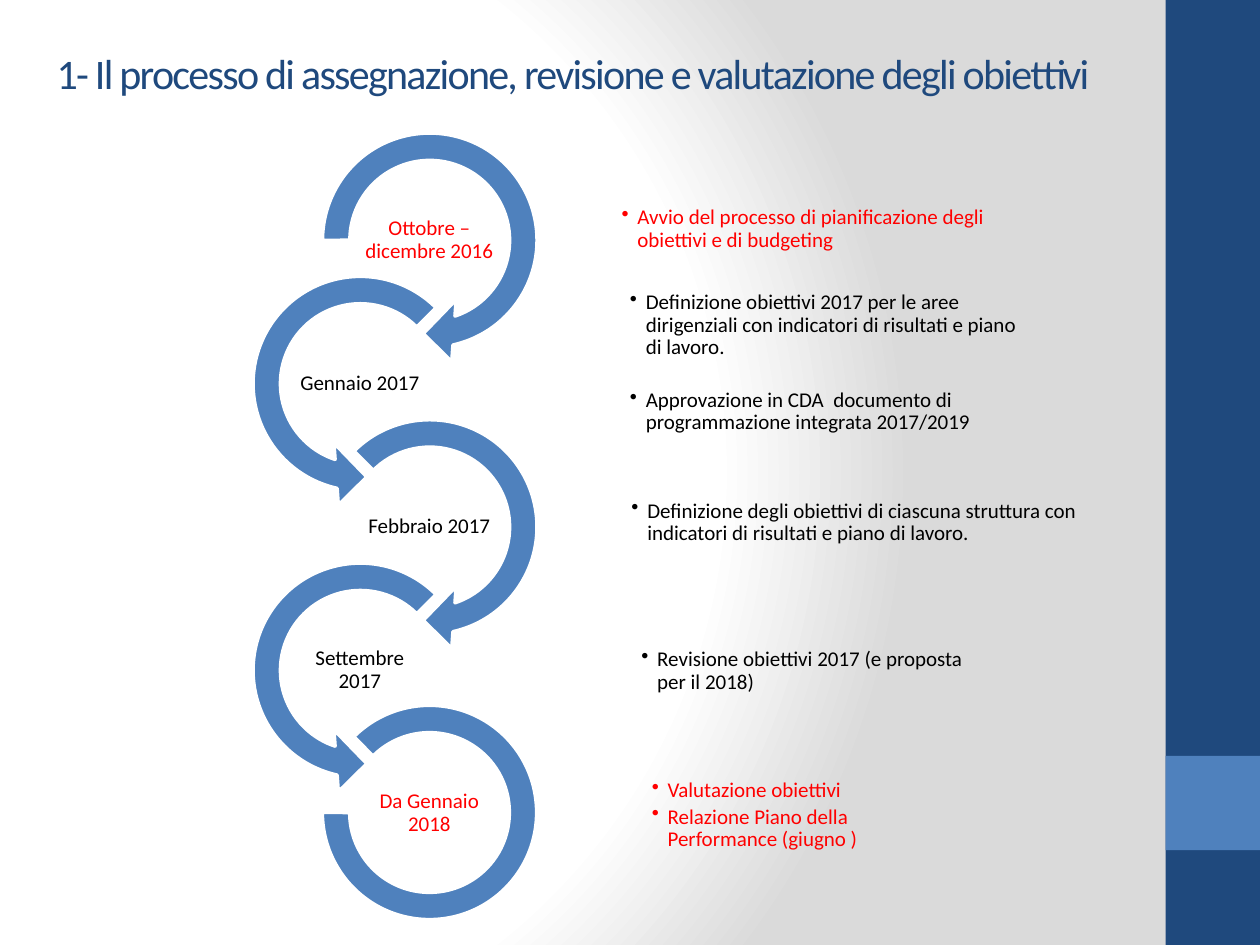
from lxml.etree import SubElement as Sub
from pptx import Presentation as Deck
from pptx.dml.color import RGBColor as Rgb
from pptx.enum.shapes import MSO_SHAPE as Kind
from pptx.enum.text import MSO_ANCHOR as Anchor, PP_ALIGN as Align
from pptx.oxml.ns import qn
from pptx.util import Cm, Pt

HUES = {"navy": "1F497D", "blue": "4F81BD", "red": "FF0000",
        "black": "000000", "white": "FFFFFF", "grey": "DADADA"}
STEP = 2.89
RING = 5.03
RIGHT, LEFT = 6.15, 4.75
ARROWS = [
    (Kind.CIRCULAR_ARROW, (0.1098, 11.42, 45, 108, 0.125)),
    (Kind.LEFT_CIRCULAR_ARROW, (0.1098, 11.42, 63, 189, 0.125)),
    (Kind.CIRCULAR_ARROW, (0.1098, 11.42, 45, 135, 0.125)),
    (Kind.LEFT_CIRCULAR_ARROW, (0.1098, 11.42, 63, 189, 0.125)),
]
STAGES = [
    ("Ottobre –dicembre 2016", "red", (12.5, 3.33, 8.26, 2.57),
     ["Avvio del processo di pianificazione degli obiettivi e di budgeting"], 2),
    ("Gennaio 2017", "black", (12.67, 5.51, 8.03, 3.61),
     ["Definizione obiettivi 2017 per le aree dirigenziali con indicatori di risultati e piano di lavoro.",
      "Approvazione in CDA  documento di programmazione integrata 2017/2019"], 17),
    ("Febbraio 2017", "black", (12.7, 9.53, 9.73, 2.01),
     ["Definizione degli obiettivi di ciascuna struttura con indicatori di risultati e piano di lavoro."], 2),
    ("Settembre 2017", "black", (12.9, 12.52, 6.81, 2.01),
     ["Revisione obiettivi 2017 (e proposta per il 2018)"], 2),
    ("Da Gennaio 2018", "red", (13.11, 15.32, 5.66, 2.24),
     ["Valutazione obiettivi", "Relazione Piano della Performance (giugno )"], 2),
]


def apply(item, form):
    for name, value in form.items():
        setattr(item, name, value)


def hue(name):
    return Rgb.from_string(HUES[name])


class Pen:
    font = {"name": "Calibri", "size": Pt(12)}
    tight = {"margin_left": Cm(0.03), "margin_right": Cm(0.03),
             "margin_top": Cm(0.03), "margin_bottom": Cm(0.03)}
    frame = {"word_wrap": True, "vertical_anchor": Anchor.MIDDLE}

    def __init__(self, slide):
        self.slide = slide

    def ground(self):
        fill = self.slide.background.fill
        fill.gradient()
        grad = self.slide.background._cSld.find(".//" + qn("a:gradFill"))
        for child in list(grad):
            grad.remove(child)
        stops = Sub(grad, qn("a:gsLst"))
        for pos, tone in ((0, "white"), (75000, "white"), (100000, "grey")):
            stop = Sub(stops, qn("a:gs"), pos=str(pos))
            Sub(stop, qn("a:srgbClr"), val=HUES[tone])
        way = Sub(grad, qn("a:path"), {"path": "circle"})
        Sub(way, qn("a:fillToRect"), l="20000", t="50000", r="100000", b="50000")

    def shape(self, kind, box, tone, edge=None, bends=()):
        item = self.slide.shapes.add_shape(kind, *map(Cm, box))
        item.shadow.inherit = False
        item.fill.solid()
        item.fill.fore_color.rgb = hue(tone)
        if edge:
            item.line.color.rgb = hue(edge)
            item.line.width = Pt(2)
        else:
            item.line.fill.background()
        for spot, bend in enumerate(bends):
            item.adjustments[spot] = bend

    def text(self, box, lines, tone, form, font=None, tight=True):
        frame = self.slide.shapes.add_textbox(*map(Cm, box)).text_frame
        apply(frame, self.frame | (self.tight if tight else {}))
        for spot, line in enumerate(lines):
            para = frame.add_paragraph() if spot else frame.paragraphs[0]
            apply(para, form)
            run = para.add_run()
            run.text = line
            apply(run.font, self.font | (font or {}))
            run.font.color.rgb = hue(tone)
        return frame

    def title(self, box, line):
        frame = self.text(box, [line], "navy", {}, {"size": Pt(24)}, False)
        frame.paragraphs[0].runs[0].font._element.set("spc", "-100")

    def label(self, box, line, tone):
        self.text(box, [line], tone, {"alignment": Align.CENTER, "line_spacing": 0.9})

    def points(self, box, lines, tone, gap):
        form = {"line_spacing": 0.9, "space_after": Pt(2), "level": 1}
        frame = self.text(box, lines, tone, form)
        if len(lines) > 1:
            frame.paragraphs[0].space_after = Pt(gap)
        for para in frame.paragraphs:
            props = para._p.get_or_add_pPr()
            props.set("marL", str(Cm(0.32)))
            props.set("indent", str(-Cm(0.32)))
            Sub(props, qn("a:buChar"), char="•")


def main():
    deck = Deck()
    apply(deck, {"slide_width": Cm(25.4), "slide_height": Cm(19.05)})
    pen = Pen(deck.slides.add_slide(deck.slide_layouts[6]))
    pen.ground()
    pen.shape(Kind.RECTANGLE, (23.5, 0, 1.9, 19.05), "navy")
    pen.shape(Kind.RECTANGLE, (23.5, 15.24, 1.9, 1.9), "blue")
    pen.title((0.89, 0.41, 23.44, 2.13),
              "1- Il processo di assegnazione, revisione e valutazione degli obiettivi")
    for row, (kind, bends) in enumerate(ARROWS):
        side = LEFT if row % 2 else RIGHT
        pen.shape(kind, (side, 2.33 + row * STEP, RING, RING), "blue", "white", bends)
    pen.shape(Kind.BLOCK_ARC, (6.5, 14.22, 4.32, 4.32), "blue", "white", (135, 108, 0.1274))
    for row, (date, tone, box, lines, gap) in enumerate(STAGES):
        side = LEFT if row % 2 else RIGHT
        pen.label((side + 1.11, 4.14 + row * STEP, 2.79, 1.4), date, tone)
        pen.points(box, lines, tone, gap)
    deck.save("out.pptx")


if __name__ == "__main__":
    main()
